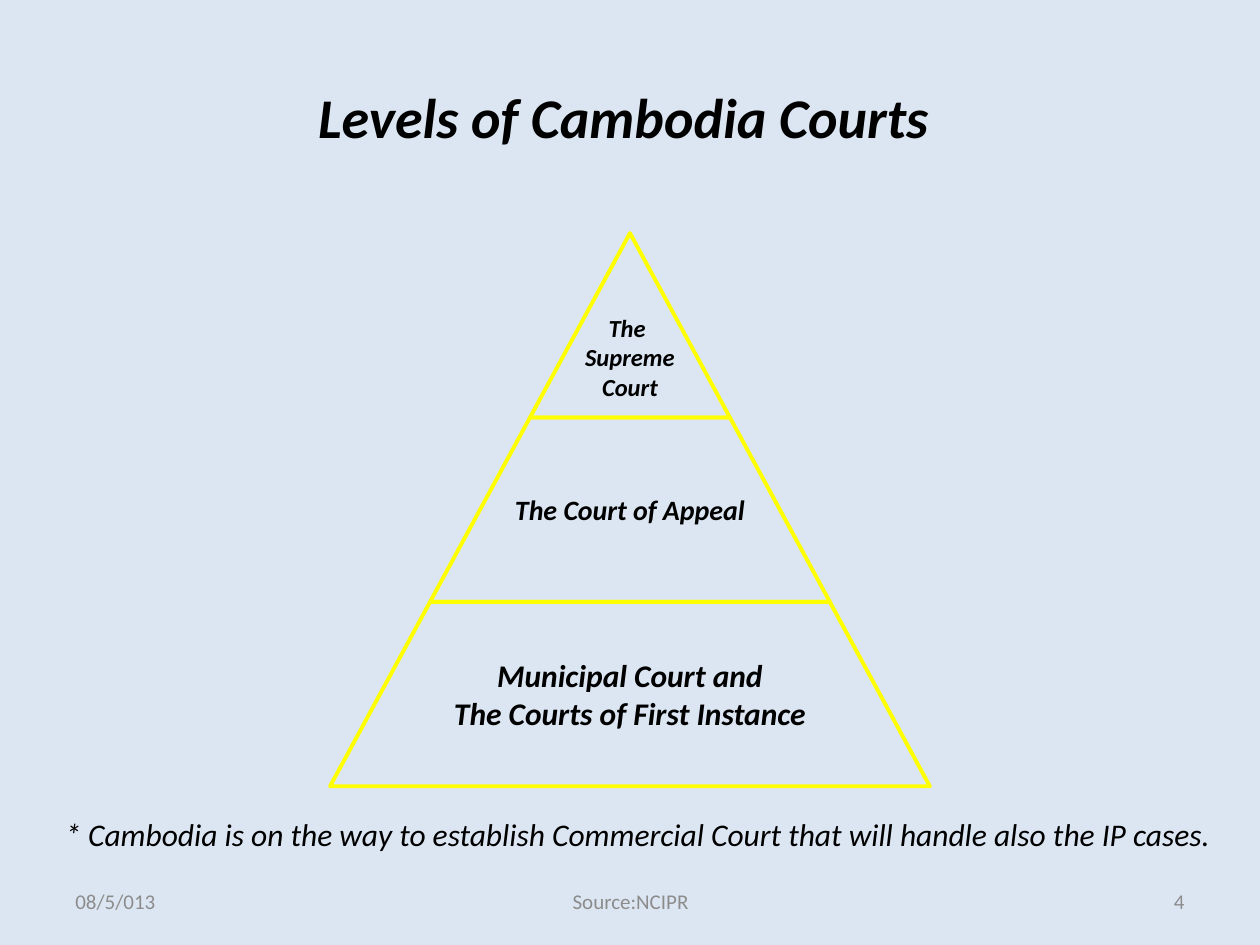
"""Build a slide showing the levels of Cambodia courts as a three-tier pyramid."""
import pptx
import pptx.dml.color
import pptx.enum.text
import pptx.util

Inches = pptx.util.Inches
ALIGN = pptx.enum.text.PP_ALIGN
MIDDLE = pptx.enum.text.MSO_ANCHOR.MIDDLE
BACKGROUND = pptx.dml.color.RGBColor(0xDC, 0xE6, 0xF2)
YELLOW = pptx.dml.color.RGBColor(0xFF, 0xFF, 0x00)
BLACK = pptx.dml.color.RGBColor(0x00, 0x00, 0x00)
GRAY = pptx.dml.color.RGBColor(0x8C, 0x8C, 0x8C)


def write_lines(frame, lines, size, color, alignment, bold=False, italic=False):
    """Write each line as a paragraph holding one formatted run."""
    for index, line in enumerate(lines):
        paragraph = frame.add_paragraph() if index else frame.paragraphs[0]
        paragraph.alignment = alignment
        run = paragraph.add_run()
        run.text = line
        run.font.name = "Calibri"
        run.font.size = pptx.util.Pt(size)
        run.font.bold = bold
        run.font.italic = italic
        run.font.color.rgb = color


def add_text(left, top, width, height, text, size, color, alignment, italic=False):
    """Add a wrapped text box with one line of text."""
    box = slide.shapes.add_textbox(Inches(left), Inches(top), Inches(width), Inches(height))
    box.text_frame.word_wrap = True
    box.text_frame.vertical_anchor = MIDDLE
    write_lines(box.text_frame, [text], size, color, alignment, italic=italic)


presentation = pptx.Presentation()
presentation.slide_width = Inches(10)
presentation.slide_height = Inches(7.5)
slide = presentation.slides.add_slide(presentation.slide_layouts[5])
slide.background.fill.solid()
slide.background.fill.fore_color.rgb = BACKGROUND

title = slide.shapes.title
title.left, title.top = Inches(0.5), Inches(0.3)
title.width, title.height = Inches(9), Inches(1.25)
title.text_frame.vertical_anchor = MIDDLE
write_lines(title.text_frame, ["Levels of Cambodia Courts "], 32, BLACK, ALIGN.CENTER, True, True)

CENTER, APEX = 5, 1.85
PYRAMID_HEIGHT, HALF_BASE = 4.39, 2.38
TIERS = [
    (["The ", "Supreme", "Court"], 14, 0.5),
    (["The Court of Appeal"], 16, 0),
    (["Municipal Court and", "The Courts of First Instance"], 18, 0),
]
for level, (lines, size, top_inset) in enumerate(TIERS):
    upper, lower = level / len(TIERS), (level + 1) / len(TIERS)
    corners = [(CENTER + side * share * HALF_BASE, APEX + share * PYRAMID_HEIGHT)
               for side, share in ((-1, lower), (-1, upper), (1, upper), (1, lower))]
    points = [(Inches(x), Inches(y)) for x, y in corners]
    builder = slide.shapes.build_freeform(*points[0])
    builder.add_line_segments(points[1:], close=True)
    tier = builder.convert_to_shape()
    tier.shadow.inherit = False
    tier.fill.background()
    tier.line.color.rgb = YELLOW
    tier.line.width = pptx.util.Pt(2.25)
    frame = tier.text_frame
    frame.word_wrap = False
    frame.vertical_anchor = MIDDLE
    frame.margin_left = frame.margin_right = frame.margin_bottom = 0
    frame.margin_top = Inches(top_inset)
    write_lines(frame, lines, size, BLACK, ALIGN.CENTER, True, True)

add_text(0.42, 6.42, 9.42, 0.4,
         "* Cambodia is on the way to establish Commercial Court that will handle also the IP cases.",
         18, BLACK, ALIGN.LEFT, True)

FOOTERS = [
    (0.5, 2.33, "08/5/013", ALIGN.LEFT),
    (3.42, 3.17, "Source:NCIPR", ALIGN.CENTER),
    (7.17, 2.33, "4", ALIGN.RIGHT),
]
for left, width, text, alignment in FOOTERS:
    add_text(left, 6.95, width, 0.4, text, 12, GRAY, alignment)

presentation.save("out.pptx")
